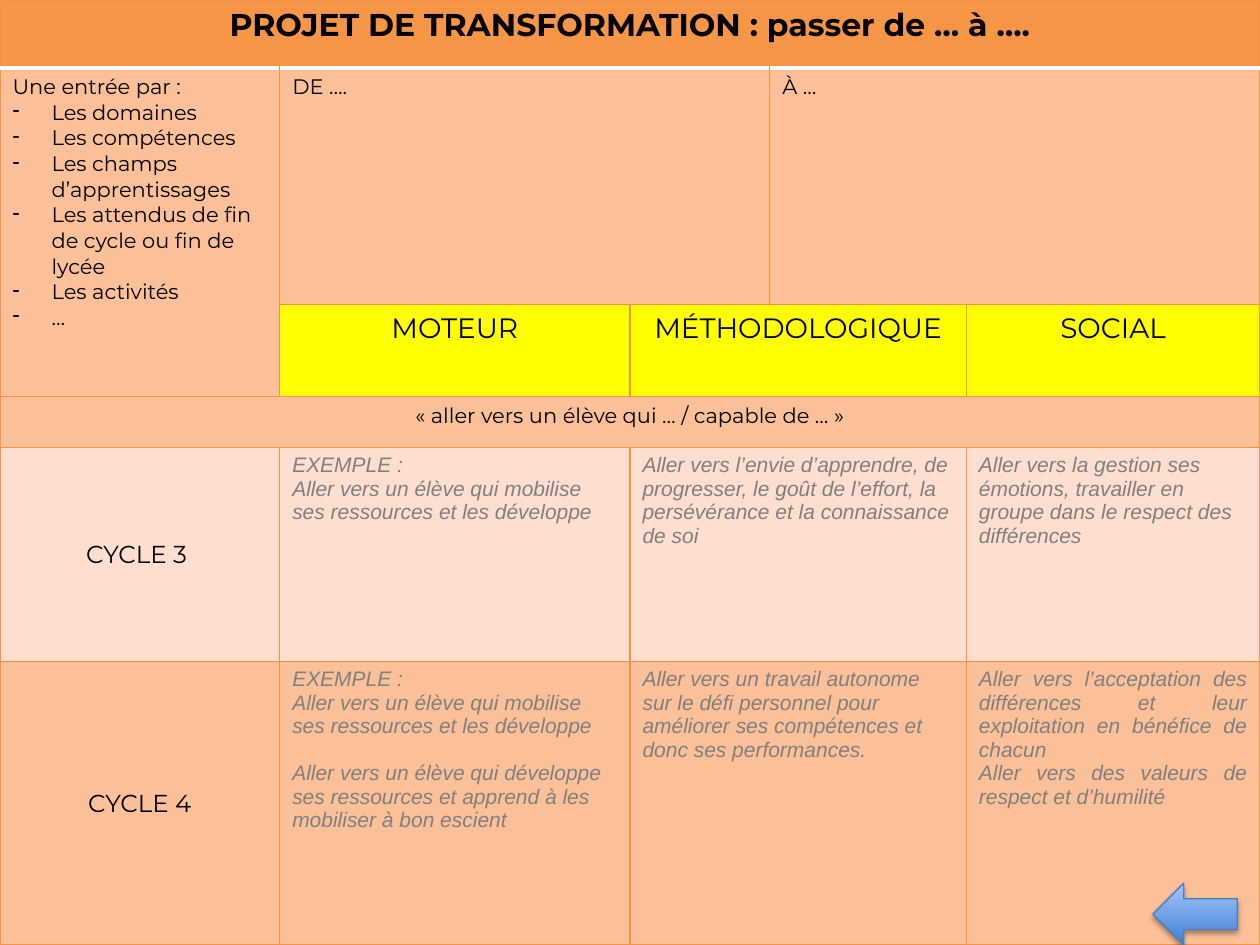
from lxml.etree import SubElement
from pptx import Presentation
from pptx.dml.color import RGBColor
from pptx.enum.shapes import MSO_SHAPE as Shape
from pptx.enum.text import MSO_ANCHOR as Anchor, PP_ALIGN as Align
from pptx.oxml import parse_xml
from pptx.oxml.ns import nsdecls, qn
from pptx.util import Inches, Pt

ORANGE, PEACH, PALE, YELLOW = "F79646", "FCC099", "FFDDCF", "FFFF00"
BORDER, WHITE = ("F69240", 0.75), ("FFFFFF", 2)
COLUMNS = [2.22, 2.78, 1.11, 1.56, 2.33]
ROWS = [0.54, 1.88, 0.73, 0.4, 1.7, 2.25]
HANG = 0.31

STYLES = {
    "title": {"name": "Montserrat", "size": 18, "bold": True, "color": "000000"},
    "body": {"name": "Montserrat", "size": 12, "bold": False, "color": "000000"},
    "skill": {"name": "Montserrat", "size": 16, "bold": False, "color": "000000"},
    "cycle": {"name": "Montserrat", "size": 14, "bold": False, "color": "000000"},
    "example": {"name": "Arial", "size": 12, "bold": False, "italic": True, "color": "808080"},
}
ENTRIES = ["Une entrée par :", "- Les domaines", "- Les compétences",
           "- Les champs d’apprentissages",
           "- Les attendus de fin de cycle ou fin de lycée", "- Les activités", "- …"]
EXAMPLE = ["EXEMPLE :", "Aller vers un élève qui mobilise ses ressources et les développe"]
# Row, column, rows spanned, columns spanned, fill, style, alignment, paragraphs
CELLS = [
    (0, 0, 1, 5, ORANGE, "title", Align.CENTER, ["PROJET DE TRANSFORMATION : passer de … à …."]),
    (1, 0, 2, 1, PEACH, "body", Align.LEFT, ENTRIES),
    (1, 1, 1, 2, PEACH, "body", Align.LEFT, ["DE …."]),
    (1, 3, 1, 2, PEACH, "body", Align.LEFT, ["À …"]),
    (2, 1, 1, 1, YELLOW, "skill", Align.CENTER, ["MOTEUR"]),
    (2, 2, 1, 2, YELLOW, "skill", Align.CENTER, ["MÉTHODOLOGIQUE"]),
    (2, 4, 1, 1, YELLOW, "skill", Align.CENTER, ["SOCIAL"]),
    (3, 0, 1, 5, PEACH, "body", Align.CENTER, ["« aller vers un élève qui … / capable de … »"]),
    (4, 0, 1, 1, PALE, "cycle", Align.CENTER, ["CYCLE 3 "]),
    (4, 1, 1, 1, PALE, "example", Align.LEFT, EXAMPLE),
    (4, 2, 1, 2, PALE, "example", Align.LEFT, [
        "Aller vers l’envie d’apprendre, de progresser, le goût de l’effort, "
        "la persévérance et la connaissance de soi"]),
    (4, 4, 1, 1, PALE, "example", Align.LEFT, [
        "Aller vers la gestion ses émotions, travailler en groupe "
        "dans le respect des différences"]),
    (5, 0, 1, 1, PEACH, "cycle", Align.CENTER, ["CYCLE 4"]),
    (5, 1, 1, 1, PEACH, "example", Align.LEFT, EXAMPLE + [
        "Aller vers un élève qui développe ses ressources "
        "et apprend à les mobiliser à bon escient"]),
    (5, 2, 1, 2, PEACH, "example", Align.LEFT, [
        "Aller vers un travail autonome sur le défi personnel "
        "pour améliorer ses compétences et donc ses performances."]),
    (5, 4, 1, 1, PEACH, "example", Align.JUSTIFY, [
        "Aller vers l’acceptation des différences et leur exploitation en bénéfice de chacun",
        "Aller vers des valeurs de respect et d’humilité"]),
]


def rgb(value):
    return RGBColor.from_string(value)


def set_font(font, style):
    for key, value in STYLES[style].items():
        if key == "color":
            font.color.rgb = rgb(value)
        else:
            setattr(font, key, Pt(value) if key == "size" else value)


def set_borders(cell, row):
    """Outline a cell, with the white rule under the title row."""
    borders = {"lnL": BORDER, "lnR": BORDER,
               "lnT": WHITE if row == 1 else BORDER,
               "lnB": WHITE if row == 0 else BORDER}
    properties = cell._tc.get_or_add_tcPr()
    for position, (side, (color, width)) in enumerate(borders.items()):
        properties.insert(position, parse_xml(
            f'<a:{side} {nsdecls("a")} w="{Pt(width)}"><a:solidFill>'
            f'<a:srgbClr val="{color}"/></a:solidFill></a:{side}>'))


def add_dash(paragraph):
    properties = paragraph._p.get_or_add_pPr()
    properties.set("marL", str(Inches(HANG)))
    properties.set("indent", str(Inches(-HANG)))
    SubElement(properties, qn("a:buFontTx"))
    SubElement(properties, qn("a:buChar"), char="-")


def write(cell, style, alignment, lines):
    frame = cell.text_frame
    for index, line in enumerate(lines):
        paragraph = frame.paragraphs[0] if index == 0 else frame.add_paragraph()
        paragraph.alignment = alignment
        if line.startswith("- "):
            add_dash(paragraph)
        run = paragraph.add_run()
        run.text = line.removeprefix("- ")
        set_font(run.font, style)
        if lines[:2] == EXAMPLE and index == 2:
            paragraph.space_before = Pt(13.4)


def add_grid(slide):
    table = slide.shapes.add_table(len(ROWS), len(COLUMNS), 0, 0,
                                   Inches(sum(COLUMNS)), Inches(sum(ROWS))).table
    for column, width in zip(table.columns, COLUMNS):
        column.width = Inches(width)
    for row, height in zip(table.rows, ROWS):
        row.height = Inches(height)
    for top, left, down, across, fill, style, alignment, lines in CELLS:
        cell = table.cell(top, left)
        if down * across > 1:
            cell.merge(table.cell(top + down - 1, left + across - 1))
        for row in range(top, top + down):
            for column in range(left, left + across):
                part = table.cell(row, column)
                part.fill.solid()
                part.fill.fore_color.rgb = rgb(fill)
                set_borders(part, row)
        if style == "cycle":
            cell.vertical_anchor = Anchor.MIDDLE
        write(cell, style, alignment, lines)


def add_back_arrow(slide):
    arrow = slide.shapes.add_shape(Shape.LEFT_ARROW, Inches(9.15), Inches(7.01),
                                   Inches(0.67), Inches(0.49))
    arrow.fill.gradient()
    arrow.fill.gradient_angle = 90
    for stop, color in zip(arrow.fill.gradient_stops, ("3F80CE", "A4C4FF")):
        stop.color.rgb = rgb(color)
    arrow.line.color.rgb = rgb("4B7EBC")
    arrow.line.width = Pt(0.75)
    arrow.shadow.inherit = False
    effects = arrow._element.spPr.find(qn("a:effectLst"))
    shadow = SubElement(effects, qn("a:outerShdw"), blurRad=str(Pt(3.1)),
                        dist=str(Pt(1.8)), dir="5400000", rotWithShape="0")
    color = SubElement(shadow, qn("a:srgbClr"), val="000000")
    SubElement(color, qn("a:alpha"), val="35000")


def main():
    presentation = Presentation()
    presentation.slide_width, presentation.slide_height = Inches(10), Inches(7.5)
    slide = presentation.slides.add_slide(presentation.slide_layouts[6])
    add_grid(slide)
    add_back_arrow(slide)
    presentation.save("out.pptx")


if __name__ == "__main__":
    main()
